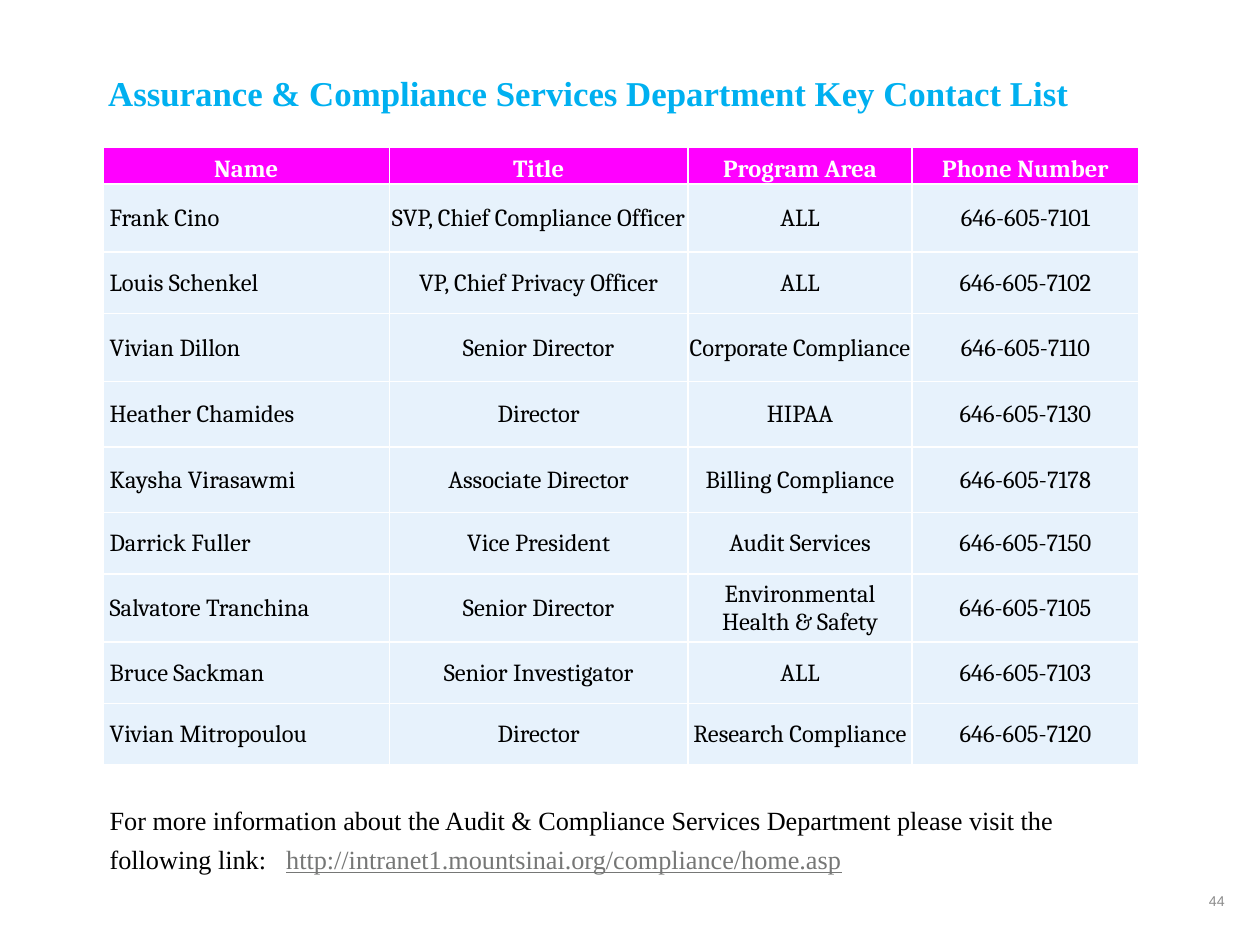
from lxml.etree import SubElement
from pptx import Presentation
from pptx.dml.color import RGBColor
from pptx.enum.text import MSO_ANCHOR as Anchor, PP_ALIGN as Align
from pptx.oxml.ns import qn
from pptx.util import Cm, Pt

COLOURS = {
    "title": "00B0F0",
    "header": "FF00FF",
    "row": "E7F2FC",
    "white": "FFFFFF",
    "text": "000000",
    "link": "767776",
    "number": "8C8C8C",
}
SERIF = "Times New Roman"

COLUMN_WIDTHS = [5.77, 6.02, 4.52, 4.57]
ROW_HEIGHTS = [0.74, 1.37, 1.24, 1.37, 1.32, 1.32, 1.24, 1.37, 1.24, 1.24]
CONTACTS = [
    ("Name", "Title", "Program Area", "Phone Number"),
    ("Frank Cino", "SVP, Chief Compliance Officer", "ALL", "646-605-7101"),
    ("Louis Schenkel", "VP, Chief Privacy Officer", "ALL", "646-605-7102"),
    ("Vivian Dillon", "Senior Director", "Corporate Compliance", "646-605-7110"),
    ("Heather Chamides", "Director", "HIPAA", "646-605-7130"),
    ("Kaysha Virasawmi", "Associate Director", "Billing Compliance", "646-605-7178"),
    ("Darrick Fuller", "Vice President", "Audit Services", "646-605-7150"),
    ("Salvatore Tranchina", "Senior Director", "Environmental Health & Safety", "646-605-7105"),
    ("Bruce Sackman", "Senior Investigator", "ALL", "646-605-7103"),
    ("Vivian Mitropoulou", "Director", "Research Compliance", "646-605-7120"),
]


def colour(name):
    return RGBColor.from_string(COLOURS[name])


def style_font(font, name, size, colour_name, bold=False):
    font.name = name
    font.size = Pt(size)
    font.bold = bold
    font.color.rgb = colour(colour_name)


def add_title(page, text):
    title = page.shapes.title
    title.left, title.top, title.width, title.height = Cm(1.6), Cm(1.22), Cm(22.86), Cm(1.73)
    frame = title.text_frame
    frame.text = text
    frame.vertical_anchor = Anchor.TOP
    frame.margin_left, frame.margin_top = Cm(0.58), Cm(0.22)
    para = frame.paragraphs[0]
    para.alignment = Align.LEFT
    style_font(para.font, SERIF, 19.9, "title", bold=True)


def add_text_box(page, left, top, width, height):
    box = page.shapes.add_textbox(Cm(left), Cm(top), Cm(width), Cm(height))
    box.text_frame.word_wrap = True
    return box.text_frame


def add_borders(cell):
    properties = cell._tc.get_or_add_tcPr()
    for side in ("a:lnL", "a:lnR", "a:lnT", "a:lnB"):
        line = SubElement(properties, qn(side), w=str(Pt(1)))
        fill = SubElement(line, qn("a:solidFill"))
        SubElement(fill, qn("a:srgbClr"), val=COLOURS["white"])


def fill_cell(cell, text, is_header, is_name):
    cell.text = text
    cell.margin_left = Cm(0.13 if is_name else 0.03)
    cell.margin_right = cell.margin_top = Cm(0.03)
    cell.margin_bottom = 0
    cell.vertical_anchor = Anchor.BOTTOM if is_header else Anchor.MIDDLE
    add_borders(cell)
    cell.fill.solid()
    cell.fill.fore_color.rgb = colour("header" if is_header else "row")
    para = cell.text_frame.paragraphs[0]
    para.alignment = Align.LEFT if is_name else Align.CENTER
    style_font(para.font, "Cambria", 14, "white" if is_header else "text", bold=is_header)


def add_contact_table(page):
    table = page.shapes.add_table(
        len(CONTACTS), len(COLUMN_WIDTHS), Cm(2.08), Cm(2.97),
        Cm(sum(COLUMN_WIDTHS)), Cm(sum(ROW_HEIGHTS))).table
    table.horz_banding = False
    for column, width in zip(table.columns, COLUMN_WIDTHS):
        column.width = Cm(width)
    for row, height in zip(table.rows, ROW_HEIGHTS):
        row.height = Cm(height)
    for r, contact in enumerate(CONTACTS):
        for c, text in enumerate(contact):
            fill_cell(table.cell(r, c), text, is_header=r == 0, is_name=r > 0 and c == 0)


def add_more_information(page, text, address):
    para = add_text_box(page, 1.96, 15.93, 21.01, 1.78).paragraphs[0]
    para.line_spacing = 1.25
    # The tab stop sets the gap before the address
    tabs = SubElement(para._p.get_or_add_pPr(), qn("a:tabLst"))
    SubElement(tabs, qn("a:tab"), pos=str(Cm(3.56)), algn="l")
    style_font(para.font, SERIF, 15, "text")
    para.add_run().text = text + "\t"
    span = para.add_run()
    span.text = address
    span.font.underline = True
    span.font.color.rgb = colour("link")


def add_page_number(page, number):
    frame = add_text_box(page, 18.21, 17.65, 6.76, 1.02)
    frame.vertical_anchor = Anchor.MIDDLE
    frame.margin_left = frame.margin_right = Cm(0.28)
    para = frame.paragraphs[0]
    para.text = number
    para.alignment = Align.RIGHT
    style_font(para.font, "Arial", 8.1, "number")


def main():
    deck = Presentation()
    deck.slide_width, deck.slide_height = Cm(25.4), Cm(19.05)
    page = deck.slides.add_slide(deck.slide_layouts.get_by_name("Title Only"))

    # Heading and page number
    add_title(page, "Assurance & Compliance Services Department Key Contact List")
    add_page_number(page, "44")

    # Contacts and where to read more
    add_contact_table(page)
    add_more_information(
        page,
        "For more information about the Audit & Compliance Services Department "
        "please visit the following link:",
        "http://intranet1.mountsinai.org/compliance/home.asp")

    deck.save("out.pptx")


if __name__ == "__main__":
    main()
